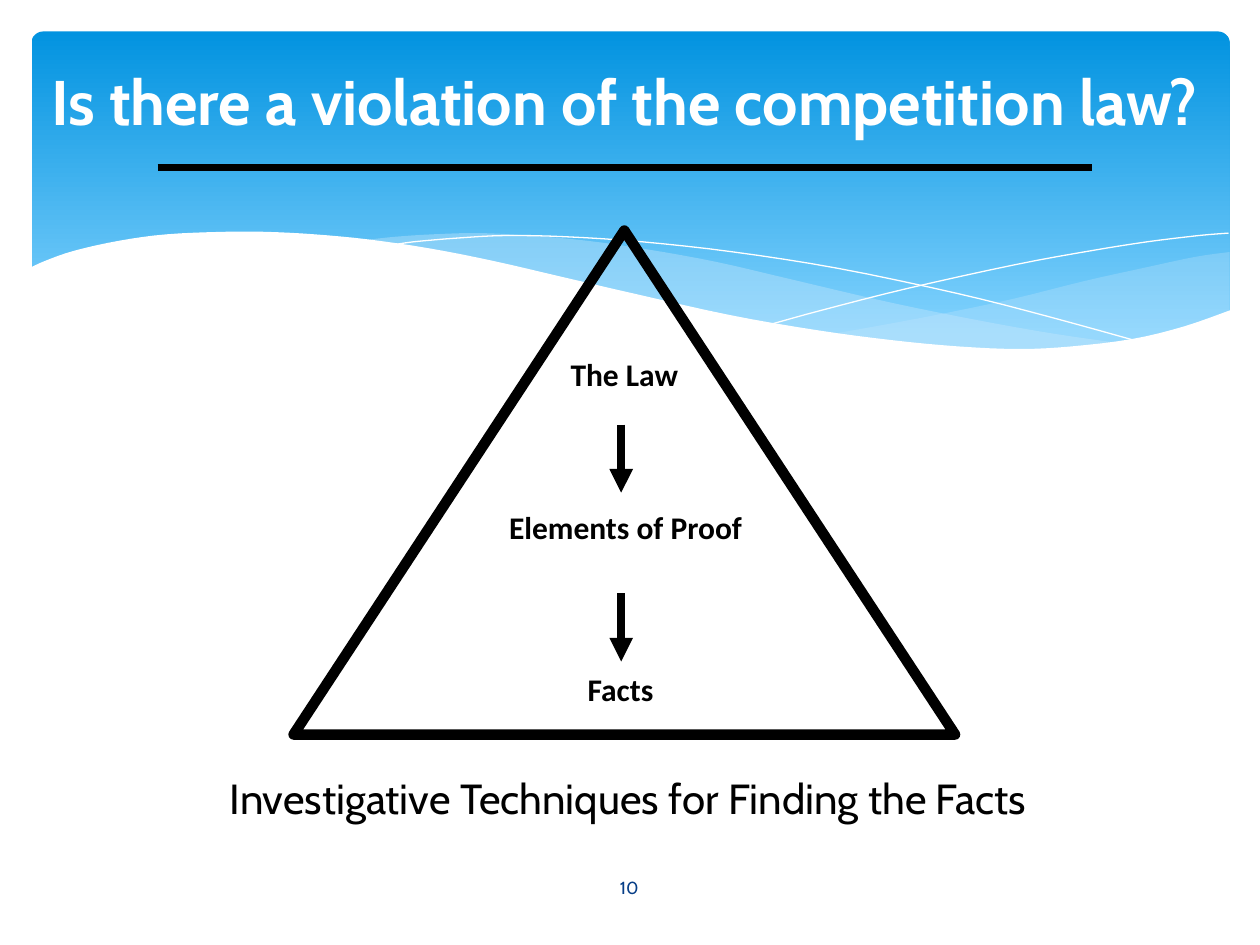
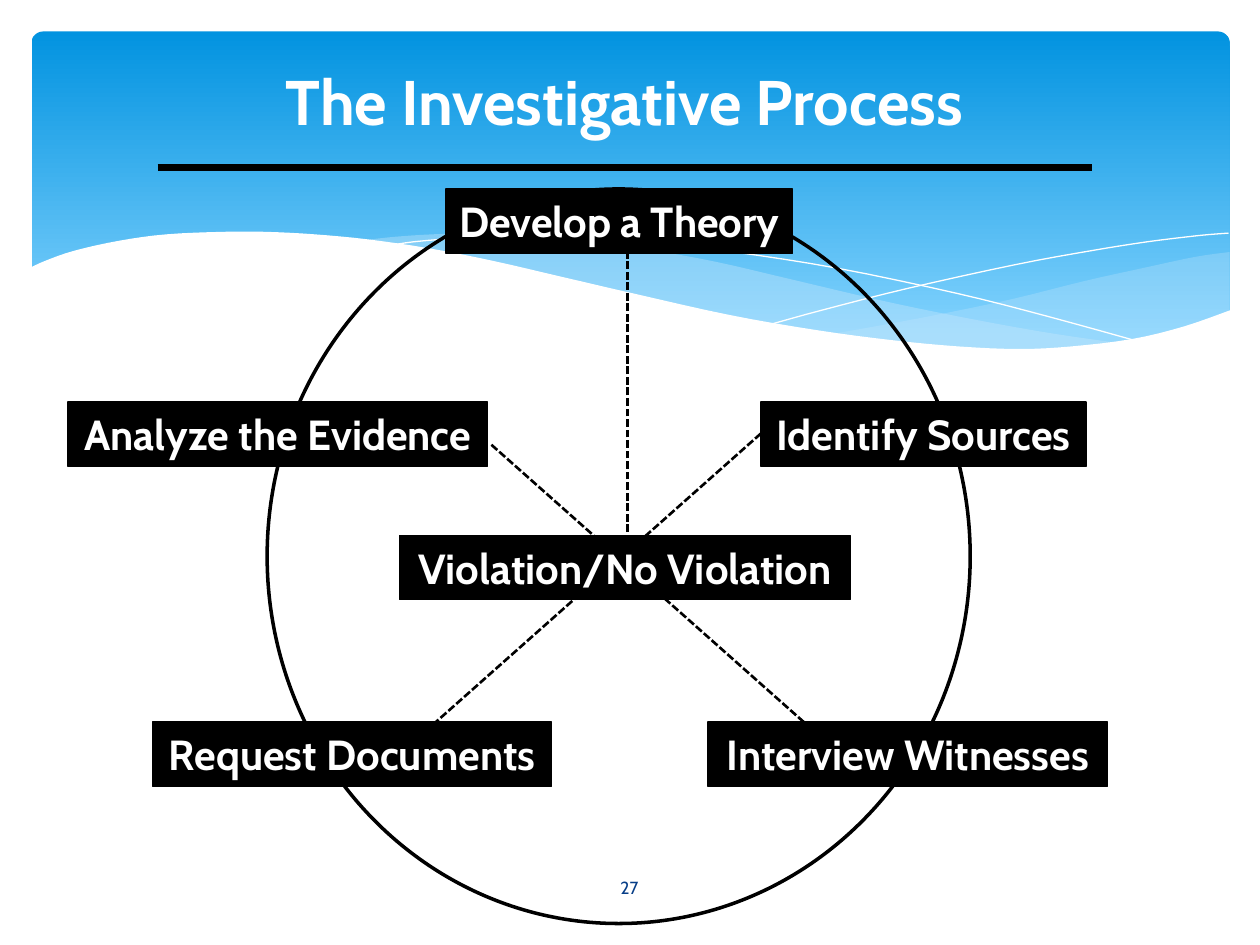
from lxml import etree
from pptx import Presentation
from pptx.dml.color import RGBColor
from pptx.enum.dml import MSO_LINE
from pptx.enum.shapes import MSO_CONNECTOR, MSO_SHAPE
from pptx.enum.text import MSO_ANCHOR, PP_ALIGN
from pptx.oxml.ns import qn
from pptx.util import Inches, Pt

RECT, ROUND = MSO_SHAPE.RECTANGLE, MSO_SHAPE.ROUNDED_RECTANGLE
OVAL, PEAK = MSO_SHAPE.OVAL, MSO_SHAPE.ISOSCELES_TRIANGLE
STRAIGHT = MSO_CONNECTOR.STRAIGHT
DASH = MSO_LINE.SQUARE_DOT
MID, TOP = MSO_ANCHOR.MIDDLE, MSO_ANCHOR.TOP
CENTER = PP_ALIGN.CENTER

COLORS = {"sky": "0293E0", "pale": "83D3FE", "mist": "C6E7FC",
          "white": "FFFFFF", "black": "000000", "navy": "073E87"}
FONT, LABEL_FONT = "Cabin", "Calibri"

# Knots of the wave edges, in inches; smooth curves run through them
RIGHT_TOP = [(9.76, 2), (9.48, 2.04), (9.06, 2.13), (8.61, 2.23), (8.05, 2.37),
             (7.53, 2.48), (7.06, 2.57), (6.61, 2.65)]
RIGHT_BASE = [(6.61, 2.65), (7.05, 2.71), (7.45, 2.75), (7.81, 2.77), (8.14, 2.78),
              (8.54, 2.76), (8.89, 2.72), (9.21, 2.65), (9.49, 2.57), (9.76, 2.47)]
MID_TOP = [(8.93, 2.73), (8.37, 2.65), (7.75, 2.54), (7.06, 2.4), (6.29, 2.22),
           (5.69, 2.08), (5.14, 1.98), (4.65, 1.91), (4.2, 1.87), (3.8, 1.85),
           (3.44, 1.86), (3.13, 1.88), (2.86, 1.91)]
MID_BASE = [(2.86, 1.91), (3.42, 1.99), (4.04, 2.11), (4.49, 2.22), (5.3, 2.4),
            (6.01, 2.55), (6.65, 2.66), (7.22, 2.74), (7.73, 2.77), (8.18, 2.78),
            (8.57, 2.77), (8.93, 2.73)]
FALL = [(3.09, 1.95), (3.28, 1.92), (3.63, 1.89), (4.01, 1.87), (4.5, 1.88),
        (5.1, 1.92), (5.82, 2), (6.65, 2.13), (7.6, 2.33), (8.31, 2.51), (9.07, 2.72)]
RISE = [(6.13, 2.57), (6.53, 2.46), (7.2, 2.29), (8.06, 2.1), (8.66, 1.99),
        (9.1, 1.92), (9.51, 1.87), (9.75, 1.85)]
FRONT = [(9.77, 2.46), (9.4, 2.59), (8.99, 2.69), (8.5, 2.75), (8.09, 2.77),
         (7.61, 2.75), (7.08, 2.7), (6.48, 2.62), (5.79, 2.5), (5.03, 2.33),
         (4.47, 2.2), (3.91, 2.07), (3.4, 1.97), (2.92, 1.9), (2.5, 1.86),
         (2.11, 1.84), (1.77, 1.84), (1.32, 1.86), (0.95, 1.91), (0.59, 1.99),
         (0.36, 2.07), (0.23, 2.13)]


def color(name):
    return RGBColor.from_string(COLORS[name])


def curve(knots, steps=4):
    """Return points on a Catmull-Rom spline through the knots."""
    ends = [knots[0], *knots, knots[-1]]
    points = [knots[0]]
    for a, b, c, d in zip(ends, ends[1:], ends[2:], ends[3:]):
        for step in range(1, steps + 1):
            t = step / steps
            points.append(tuple(
                (2 * q + (r - p) * t + (2 * p - 5 * q + 4 * r - s) * t ** 2
                 + (3 * q - p - 3 * r + s) * t ** 3) / 2
                for p, q, r, s in zip(a, b, c, d)))
    return points


def paint(shape, fill=None, line=None, width=0.75):
    shape.shadow.inherit = False
    if fill:
        shape.fill.solid()
        shape.fill.fore_color.rgb = color(fill)
    else:
        shape.fill.background()
    if line:
        shape.line.color.rgb = color(line)
        shape.line.width = Pt(width)
    else:
        shape.line.fill.background()


def add_wave(slide, points, fill=None, alpha=100, line=None):
    spots = [(Inches(x), Inches(y)) for x, y in points]
    pen = slide.shapes.build_freeform(*spots[0])
    pen.add_line_segments(spots[1:], close=fill is not None)
    wave = pen.convert_to_shape()
    paint(wave, fill, line, 0)
    if alpha < 100:
        tint = wave._element.spPr.find(".//" + qn("a:srgbClr"))
        etree.SubElement(tint, qn("a:alpha"), val=str(alpha * 1000))


def add_form(slide, kind, box, **look):
    form = slide.shapes.add_shape(kind, *map(Inches, box))
    paint(form, **look)
    return form


def add_line(slide, start, end, width, dash=None, arrow=False):
    line = slide.shapes.add_connector(STRAIGHT, *map(Inches, (*start, *end)))
    line.line.color.rgb = color("black")
    line.line.width = Pt(width)
    if dash:
        line.line.dash_style = dash
    props = line._element.spPr
    if arrow:
        etree.SubElement(props.find(qn("a:ln")), qn("a:tailEnd"), type="triangle")
    etree.SubElement(props, qn("a:effectLst"))


def write(frame, text, size, ink, bold=False, font=FONT, anchor=MID):
    frame.vertical_anchor = anchor
    para = frame.paragraphs[0]
    para.text = text
    para.alignment = CENTER
    para.font.name = font
    para.font.size = Pt(size)
    para.font.bold = bold
    para.font.color.rgb = color(ink)


def add_text(slide, box, text, size, ink, **style):
    frame = slide.shapes.add_textbox(*map(Inches, box)).text_frame
    frame.word_wrap = True
    write(frame, text, size, ink, **style)


def add_tag(slide, left, top, width, text):
    tag = add_form(slide, RECT, (left, top, width, 0.51), fill="black", line="black")
    frame = tag.text_frame
    frame.word_wrap = False
    frame.margin_left = frame.margin_right = Inches(0.05)
    frame.margin_top = frame.margin_bottom = Inches(0.05)
    write(frame, text, 24, "white", bold=True)


def add_band(slide):
    band = add_form(slide, ROUND, (0.25, 0.25, 9.51, 2.7))
    band.adjustments[0] = 0.034
    band.fill.gradient()
    band.fill.gradient_angle = 270
    for stop, name, place in zip(band.fill.gradient_stops, ("sky", "pale"), (0, 0.9)):
        stop.color.rgb = color(name)
        stop.position = place
    add_wave(slide, curve(RIGHT_TOP) + curve(RIGHT_BASE), "mist", 29)
    add_wave(slide, curve(MID_TOP) + curve(MID_BASE), "mist", 40)
    for knots in (FALL, RISE):
        add_wave(slide, curve(knots), line="white")
    add_wave(slide, curve(FRONT) + [(0.23, 3.29), (9.77, 3.29)], "white")


def add_page(deck, title, number):
    slide = deck.slides.add_slide(deck.slide_layouts[6])
    add_band(slide)
    add_text(slide, (0.12, 0.17, 9.67, 1.25), title, 36, "white", bold=True)
    add_line(slide, (1.25, 1.33), (8.67, 1.33), 4)
    add_text(slide, (4.36, 6.84, 1.27, 0.4), number, 10, "navy")
    return slide


def add_proof(deck):
    slide = add_page(deck, "Is there a violation of the competition law?", "10")
    add_form(slide, PEAK, (2.33, 1.83, 5.25, 4), line="black", width=6)
    # Steps from law to facts
    for top in (3.37, 4.71):
        add_line(slide, (4.93, top), (4.93, top + 0.54), 4.5, arrow=True)
    for left, top, text in ((0.87, 2.77, "The Law"), (0.88, 3.98, "Elements of Proof"),
                            (0.84, 5.27, "Facts")):
        add_text(slide, (left, top, 8.17, 0.4), text, 18, "black", bold=True,
                 font=LABEL_FONT, anchor=TOP)
    add_text(slide, (0.9, 6.08, 8.17, 0.51),
             "Investigative Techniques for Finding the Facts", 24, "black", anchor=TOP)


def add_process(deck):
    slide = add_page(deck, "The Investigative Process", "27")
    add_form(slide, OVAL, (2.12, 1.5, 5.58, 5.83), line="black", width=2)
    # Stages on the ring
    for stage in ((3.54, 1.5, 2.75, "Develop a Theory"),
                  (1.21, 5.73, 3.17, "Request Documents"),
                  (0.54, 3.19, 3.33, "Analyze the Evidence"),
                  (6.04, 3.19, 2.58, "Identify Sources"),
                  (5.62, 5.73, 3.17, "Interview Witnesses")):
        add_tag(slide, *stage)
    # Spokes, then the hub over them
    for start, end in (((4.98, 4.39), (4.98, 1.92)), ((3.9, 3.53), (6.48, 5.82)),
                       ((6.04, 3.44), (3.46, 5.73))):
        add_line(slide, start, end, 1.5, dash=DASH)
    add_tag(slide, 3.17, 4.25, 3.58, "Violation/No Violation")


def main():
    deck = Presentation()
    deck.slide_width, deck.slide_height = Inches(10), Inches(7.5)
    add_proof(deck)
    add_process(deck)
    deck.save("out.pptx")


if __name__ == "__main__":
    main()
